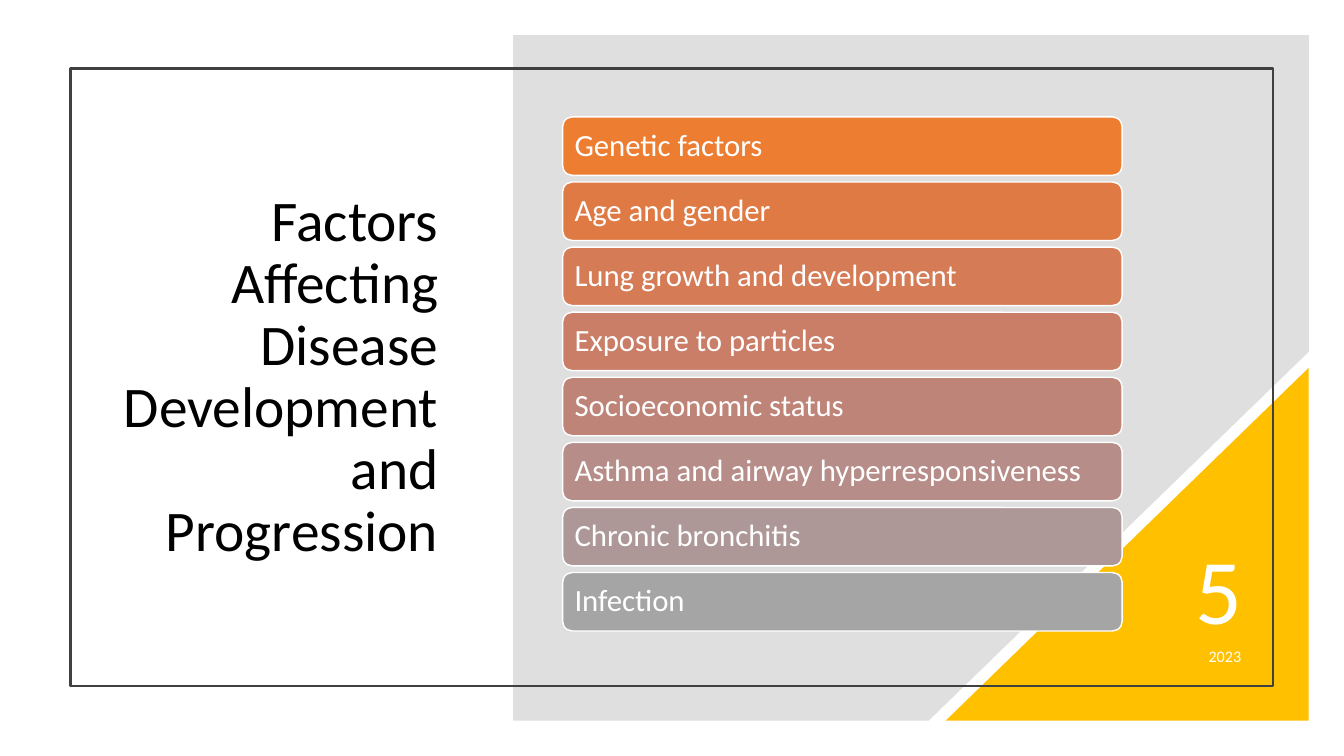
from dataclasses import dataclass

from lxml.etree import SubElement
from pptx import Presentation
from pptx.dml.color import RGBColor
from pptx.enum.shapes import MSO_SHAPE
from pptx.enum.text import MSO_ANCHOR, MSO_AUTO_SIZE, PP_ALIGN
from pptx.oxml.ns import qn
from pptx.util import Inches, Pt

TITLE = "Factors Affecting Disease Development and Progression"
YEAR = "2023"
SLIDE_NUMBER = "5"
FACTORS = [
    ("Genetic factors", "ED7D31"),
    ("Age and gender", "E07A44"),
    ("Lung growth and development", "D57B56"),
    ("Exposure to particles", "CA7E67"),
    ("Socioeconomic status", "BF8478"),
    ("Asthma and airway hyperresponsiveness", "B68D88"),
    ("Chronic bronchitis", "AD9897"),
    ("Infection", "A5A5A5"),
]

PANEL_CORNERS = [(5.09, 0.35), (12.98, 0.35), (12.98, 3.49), (9.21, 7.15), (5.09, 7.15)]
BAR_LEFT, BAR_WIDTH, BAR_HEIGHT = 5.58, 5.55, 0.58
FIRST_BAR_TOP, LAST_BAR_TOP = 1.16, 5.68


@dataclass(frozen=True)
class Theme:
    font: str = "Calibri"
    black: str = "000000"
    white: str = "FFFFFF"
    panel: str = "808080"
    panel_opacity: int = 25
    corner: str = "FFC000"
    frame: str = "404040"
    title_size: float = 41
    factor_size: float = 22
    number_size: float = 66
    year_size: float = 11.5


THEME = Theme()


def rgb(color):
    return RGBColor.from_string(color)


def style_shape(shape, fill=None, line=None, line_width=1):
    shape.shadow.inherit = False
    if fill:
        shape.fill.solid()
        shape.fill.fore_color.rgb = rgb(fill)
    else:
        shape.fill.background()
    if line:
        shape.line.color.rgb = rgb(line)
        shape.line.width = Pt(line_width)
    else:
        shape.line.fill.background()


def write(shape, text, size, color, align, line_spacing=0.9, space_after=0):
    frame = shape.text_frame
    frame.word_wrap = True
    frame.auto_size = MSO_AUTO_SIZE.NONE
    frame.vertical_anchor = MSO_ANCHOR.MIDDLE
    paragraph = frame.paragraphs[0]
    paragraph.alignment = align
    paragraph.line_spacing = line_spacing
    paragraph.space_after = Pt(space_after)
    run = paragraph.add_run()
    run.text = text
    run.font.name = THEME.font
    run.font.size = Pt(size)
    run.font.color.rgb = rgb(color)


def add_box(slide, preset, left, top, width, height):
    return slide.shapes.add_shape(
        preset, Inches(left), Inches(top), Inches(width), Inches(height))


def add_title(slide):
    title = slide.shapes.title
    title.left, title.top = Inches(1.1), Inches(1.3)
    title.width, title.height = Inches(3.35), Inches(4.9)
    write(title, TITLE, THEME.title_size, THEME.black, PP_ALIGN.RIGHT)


def add_panel(slide):
    corners = [(Inches(x), Inches(y)) for x, y in PANEL_CORNERS]
    builder = slide.shapes.build_freeform(*corners[0])
    builder.add_line_segments(corners[1:], close=True)
    panel = builder.convert_to_shape()
    style_shape(panel, THEME.panel)
    color = panel.element.spPr.find(qn("a:solidFill"))[0]
    SubElement(color, qn("a:alpha"), val=str(THEME.panel_opacity * 1000))


def add_corner(slide):
    corner = add_box(slide, MSO_SHAPE.RIGHT_TRIANGLE, 9.38, 3.65, 3.6, 3.5)
    style_shape(corner, THEME.corner)
    corner.element.spPr.find(qn("a:xfrm")).set("flipH", "1")
    year = slide.shapes.add_textbox(Inches(9.84), Inches(6.31), Inches(2.57), Inches(0.4))
    write(year, YEAR, THEME.year_size, THEME.white, PP_ALIGN.RIGHT, 1, 6)
    number = slide.shapes.add_textbox(Inches(10.59), Inches(5.35), Inches(1.83), Inches(1.1))
    write(number, SLIDE_NUMBER, THEME.number_size, THEME.white, PP_ALIGN.RIGHT, 0.9, 6)


def add_factors(slide):
    pitch = (LAST_BAR_TOP - FIRST_BAR_TOP) / (len(FACTORS) - 1)
    for index, (text, color) in enumerate(FACTORS):
        bar = add_box(slide, MSO_SHAPE.ROUNDED_RECTANGLE, BAR_LEFT,
                      FIRST_BAR_TOP + index * pitch, BAR_WIDTH, BAR_HEIGHT)
        style_shape(bar, color, THEME.white)
        bar.text_frame.margin_left = bar.text_frame.margin_right = Inches(0.09)
        write(bar, text, THEME.factor_size, THEME.white, PP_ALIGN.LEFT)


def main():
    presentation = Presentation()
    presentation.slide_width = Inches(13.33)
    presentation.slide_height = Inches(7.5)
    slide = presentation.slides.add_slide(presentation.slide_layouts[5])
    add_title(slide)
    add_panel(slide)
    add_corner(slide)
    frame = add_box(slide, MSO_SHAPE.RECTANGLE, 0.7, 0.68, 11.93, 6.13)
    style_shape(frame, line=THEME.frame, line_width=1.5)
    add_factors(slide)
    presentation.save("out.pptx")


if __name__ == "__main__":
    main()
